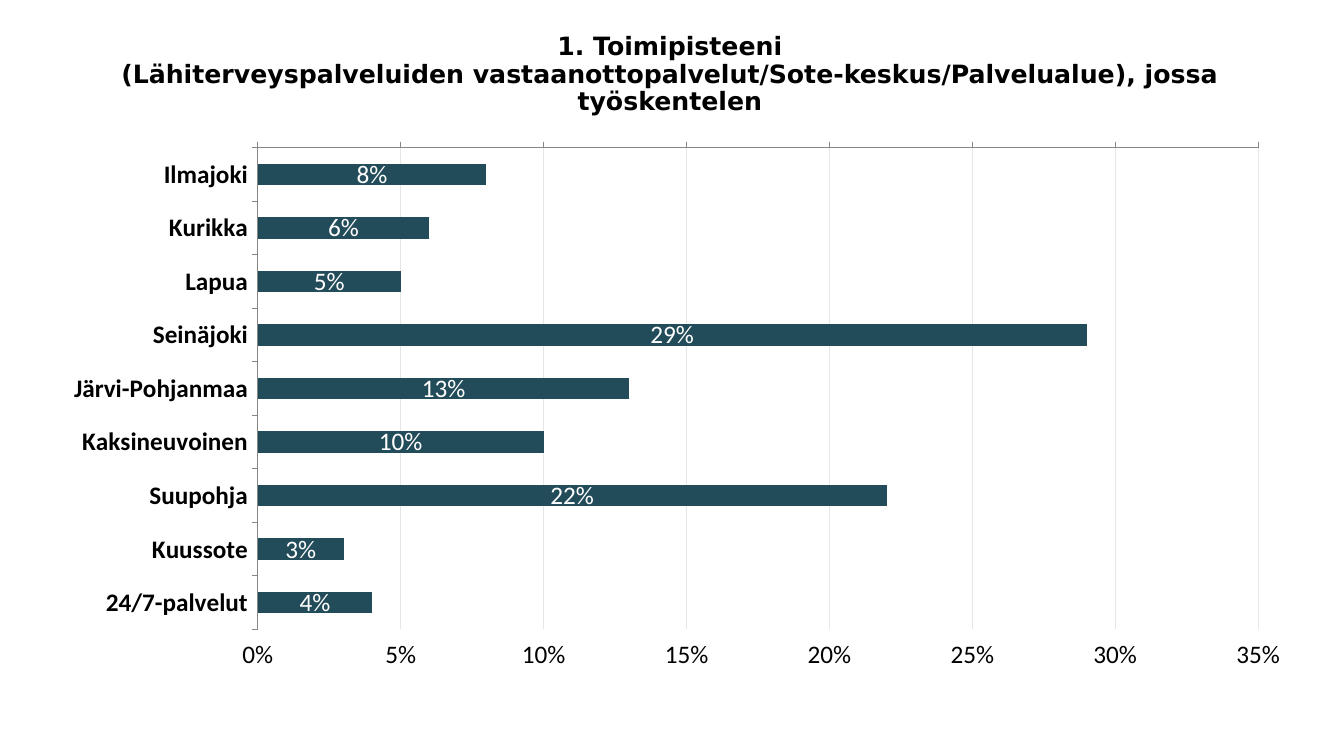
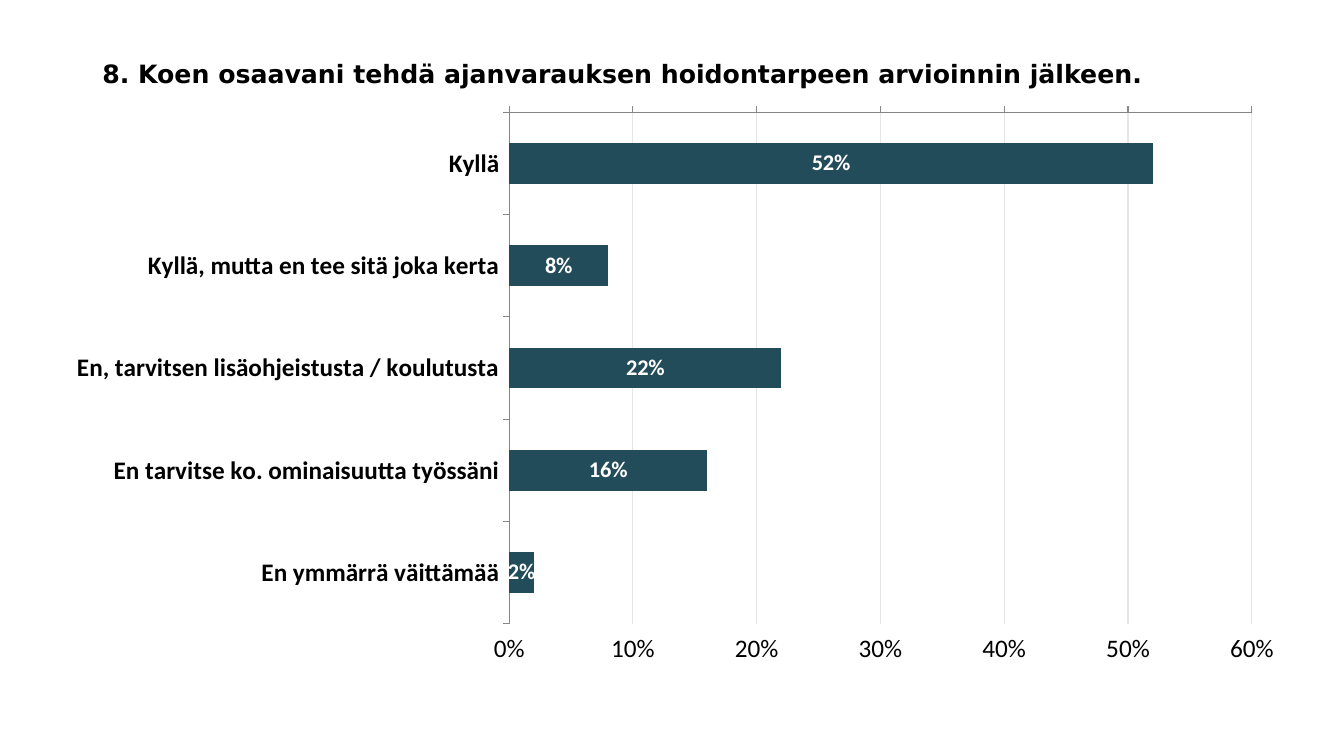
"""Builds two survey slides, each with a title and a bar chart."""
from lxml import etree
from pptx import Presentation
from pptx.chart import data as cd
from pptx.dml.color import RGBColor
from pptx.enum import chart as ch, text as tx
from pptx.oxml import ns
from pptx.util import Pt

BLACK = RGBColor(0, 0, 0)
WHITE = RGBColor(255, 255, 255)
TEAL = RGBColor(0x23, 0x4C, 0x5A)
GRID = RGBColor(0xE6, 0xE6, 0xE6)
GREY = RGBColor(0x86, 0x86, 0x86)


def style(font, size, color, bold):
    font.name, font.size, font.bold = "Calibri", Pt(size), bold
    font.color.rgb = color


def place(chart, box):
    area = chart._chartSpace.chart.plotArea
    for old in area.findall(ns.qn("c:layout")):
        area.remove(old)
    layout = etree.Element(ns.qn("c:layout"))
    manual = etree.SubElement(layout, ns.qn("c:manualLayout"))
    parts = [("layoutTarget", "inner"), ("xMode", "edge"), ("yMode", "edge")]
    for tag, val in parts + list(zip("xywh", box)):
        etree.SubElement(manual, ns.qn("c:" + tag)).set("val", str(val))
    area.insert(0, layout)


PAGES = [
    {
        "title": ["1. Toimipisteeni",
                  "(Lähiterveyspalveluiden vastaanottopalvelut/Sote-keskus/Palvelualue), jossa työskentelen"],
        "head": (78, 22, 801, 63),
        "align": tx.PP_ALIGN.CENTER,
        "chart": (18, 85, 908, 426),
        "plot": (0.183, 0.048, 0.787, 0.808),
        "max": 0.35, "step": 0.05,
        "label": (18, False),
        "rows": [("Ilmajoki", 0.08), ("Kurikka", 0.06), ("Lapua", 0.05),
                 ("Seinäjoki", 0.29), ("Järvi-Pohjanmaa", 0.13),
                 ("Kaksineuvoinen", 0.1), ("Suupohja", 0.22),
                 ("Kuussote", 0.03), ("24/7-palvelut", 0.04)],
    },
    {
        "title": ["8. Koen osaavani tehdä ajanvarauksen hoidontarpeen arvioinnin jälkeen."],
        "head": (66, 29, 828, 49),
        "align": tx.PP_ALIGN.LEFT,
        "chart": (38, 72, 890, 411),
        "plot": (0.366, 0.02, 0.596, 0.889),
        "max": 0.6, "step": 0.1,
        "label": (16, True),
        "rows": [("Kyllä", 0.52), ("Kyllä, mutta en tee sitä joka kerta", 0.08),
                 ("En, tarvitsen lisäohjeistusta / koulutusta", 0.22),
                 ("En tarvitse ko. ominaisuutta työssäni", 0.16),
                 ("En ymmärrä väittämää", 0.02)],
    },
]

deck = Presentation()
deck.slide_width, deck.slide_height = Pt(960), Pt(540)

for page in PAGES:
    slide = deck.slides.add_slide(deck.slide_layouts[6])

    frame = slide.shapes.add_textbox(*map(Pt, page["head"])).text_frame
    frame.word_wrap = True
    frame.vertical_anchor = tx.MSO_ANCHOR.MIDDLE
    para = frame.paragraphs[0]
    para.alignment, para.line_spacing = page["align"], 0.9
    for i, line in enumerate(page["title"]):
        if i:
            para.add_line_break()
        run = para.add_run()
        run.text = line
        style(run.font, 18, BLACK, True)
        run.font.name = "DejaVu Sans"

    data = cd.CategoryChartData(number_format="0%")
    data.categories = [name for name, val in page["rows"]]
    data.add_series("Series 1", [val for name, val in page["rows"]])
    chart = slide.shapes.add_chart(
        ch.XL_CHART_TYPE.BAR_CLUSTERED, *map(Pt, page["chart"]), data).chart
    chart.has_title = chart.has_legend = False
    style(chart.font, 18, BLACK, False)
    place(chart, page["plot"])

    plot = chart.plots[0]
    plot.gap_width, plot.vary_by_categories = 150, False
    fill = plot.series[0].format.fill
    fill.solid()
    fill.fore_color.rgb = TEAL
    plot.has_data_labels = True
    labels = plot.data_labels
    labels.show_value = True
    labels.number_format, labels.number_format_is_linked = "#%", False
    labels.position = ch.XL_LABEL_POSITION.CENTER
    size, bold = page["label"]
    style(labels.font, size, WHITE, bold)

    cats, vals = chart.category_axis, chart.value_axis
    for axis in (cats, vals):
        axis.major_tick_mark = ch.XL_TICK_MARK.OUTSIDE
        axis.minor_tick_mark = ch.XL_TICK_MARK.NONE
        axis.format.line.color.rgb = GREY
        axis.format.line.width = Pt(0.75)
        style(axis.tick_labels.font, 18, BLACK, axis is cats)
    cats.reverse_order = True
    cats.has_major_gridlines = False
    vals.minimum_scale, vals.maximum_scale = 0, page["max"]
    vals.major_unit = page["step"]
    vals.tick_label_position = ch.XL_TICK_LABEL_POSITION.HIGH
    vals.tick_labels.number_format = "0%"
    vals.tick_labels.number_format_is_linked = False
    vals.has_major_gridlines = True
    grid = vals.major_gridlines.format.line
    grid.color.rgb, grid.width = GRID, Pt(0.75)

deck.save("out.pptx")
